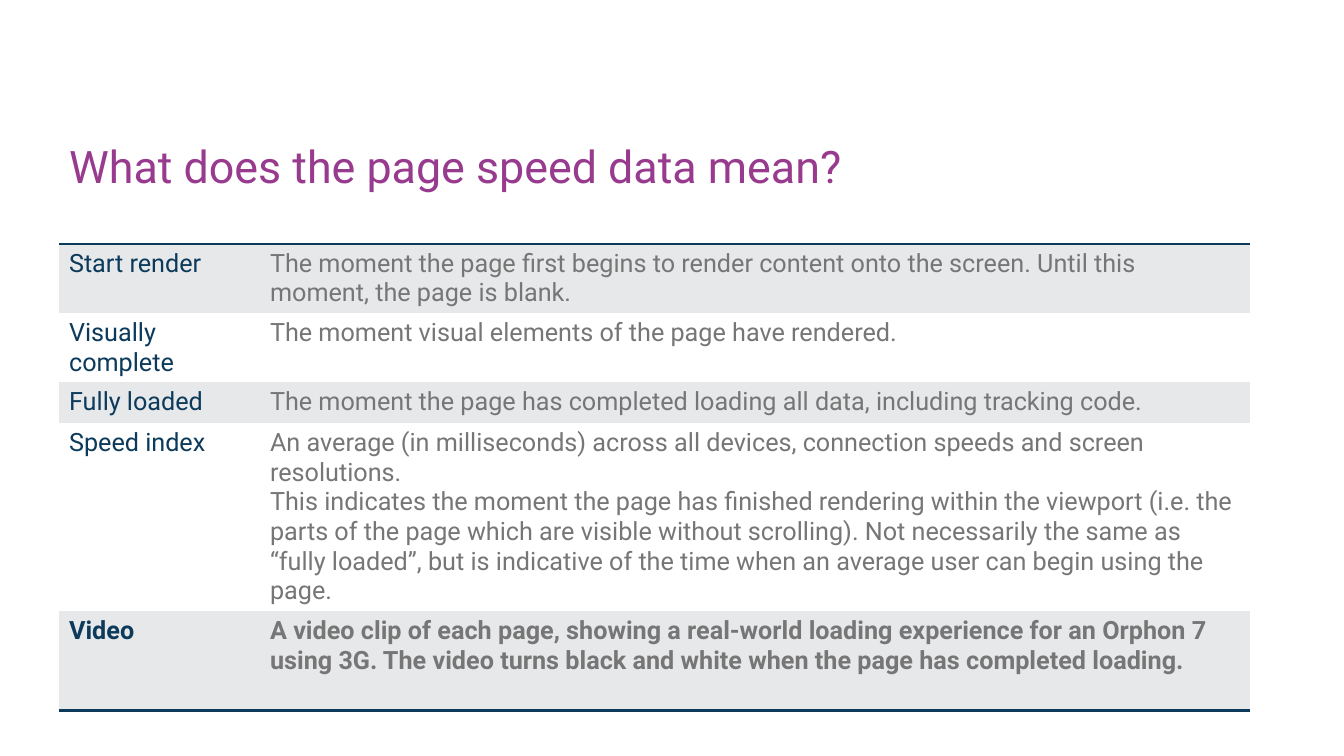
from dataclasses import dataclass

from lxml.etree import SubElement
from pptx import Presentation
from pptx.dml.color import RGBColor
from pptx.enum.text import MSO_ANCHOR, MSO_AUTO_SIZE, PP_ALIGN
from pptx.oxml.ns import qn
from pptx.slide import Slide
from pptx.table import _Cell as Cell
from pptx.text.text import TextFrame
from pptx.util import Emu, Pt

EMU_PER_INCH = 914400
PX_PER_INCH = 100.8
NO_STYLE_NO_GRID = "{2D5ABB26-0587-4C30-8999-92F81FD0307C}"


@dataclass(frozen=True)
class Theme:
    font: str = "Roboto"
    title: str = "983B8E"
    term: str = "0C3A5B"
    meaning: str = "767676"
    bands: tuple[str, str] = ("E7E8EA", "FFFFFF")
    title_size: int = 32
    table_size: int = 18
    rule_width: int = 2


@dataclass(frozen=True)
class Entry:
    term: str
    meaning: tuple[str, ...]
    height: int
    bold: bool = False


THEME = Theme()
COLUMN_WIDTHS = (201, 990)
ENTRIES = (
    Entry("Start render", (
        "The moment the page first begins to render content onto the screen. "
        "Until this moment, the page is blank.",), 69),
    Entry("Visually complete", (
        "The moment visual elements of the page have rendered.",), 69),
    Entry("Fully loaded", (
        "The moment the page has completed loading all data, including tracking code.",), 41),
    Entry("Speed index", (
        "An average (in milliseconds) across all devices, connection speeds and screen "
        "resolutions.",
        "This indicates the moment the page has finished rendering within the viewport "
        "(i.e. the parts of the page which are visible without scrolling). Not necessarily "
        "the same as “fully loaded”, but is indicative of the time when an average user can "
        "begin using the page."), 188),
    Entry("Video", (
        "A video clip of each page, showing a real-world loading experience for an Orphon 7 "
        "using 3G. The video turns black and white when the page has completed loading.",),
        99, bold=True),
)


def px(n: int) -> Emu:
    return Emu(round(n * EMU_PER_INCH / PX_PER_INCH))


def write(tf: TextFrame, *lines: str, size: int, color: str,
          bold: bool = False, spacing: float = 1.0) -> None:
    for i, line in enumerate(lines):
        p = tf.add_paragraph() if i else tf.paragraphs[0]
        p.alignment = PP_ALIGN.LEFT
        p.line_spacing = spacing
        r = p.add_run()
        r.text = line
        r.font.name = THEME.font
        r.font.size = Pt(size)
        r.font.bold = bold
        r.font.color.rgb = RGBColor.from_string(color)


def add_rule(cell: Cell, side: str) -> None:
    """Draw the border of a cell on one side: lnT or lnB."""
    tc_pr = cell._tc.get_or_add_tcPr()
    ln = SubElement(tc_pr, qn(f"a:{side}"), w=str(Pt(THEME.rule_width)))
    fill = SubElement(ln, qn("a:solidFill"))
    SubElement(fill, qn("a:srgbClr"), val=THEME.term)


def add_title(s: Slide, text: str) -> None:
    sp = s.shapes.title
    sp.left, sp.top, sp.width, sp.height = px(59), px(126), px(1243), px(72)
    tf = sp.text_frame
    tf.word_wrap = True
    tf.auto_size = MSO_AUTO_SIZE.NONE
    tf.vertical_anchor = MSO_ANCHOR.BOTTOM
    write(tf, text, size=THEME.title_size, color=THEME.title, spacing=0.9)


def add_glossary(s: Slide, entries: tuple[Entry, ...]) -> None:
    frame = s.shapes.add_table(
        len(entries), len(COLUMN_WIDTHS), px(59), px(244),
        px(sum(COLUMN_WIDTHS)), px(sum(e.height for e in entries)))
    table = frame.table
    table.first_row = table.horz_banding = False
    table._tbl.tblPr.find(qn("a:tableStyleId")).text = NO_STYLE_NO_GRID
    for column, width in zip(table.columns, COLUMN_WIDTHS):
        column.width = px(width)

    for i, entry in enumerate(entries):
        table.rows[i].height = px(entry.height)
        columns = (((entry.term,), THEME.term), (entry.meaning, THEME.meaning))
        for j, (lines, color) in enumerate(columns):
            cell = table.cell(i, j)
            if i == 0:
                add_rule(cell, "lnT")
            if i == len(entries) - 1:
                add_rule(cell, "lnB")
            cell.fill.solid()
            cell.fill.fore_color.rgb = RGBColor.from_string(THEME.bands[i % 2])
            write(cell.text_frame, *lines, size=THEME.table_size, color=color,
                  bold=entry.bold)


def main() -> None:
    prs = Presentation()
    prs.slide_width, prs.slide_height = px(1344), px(756)
    s = prs.slides.add_slide(prs.slide_layouts.get_by_name("Title Only"))
    add_title(s, "What does the page speed data mean?")
    add_glossary(s, ENTRIES)
    prs.save("out.pptx")


if __name__ == "__main__":
    main()
